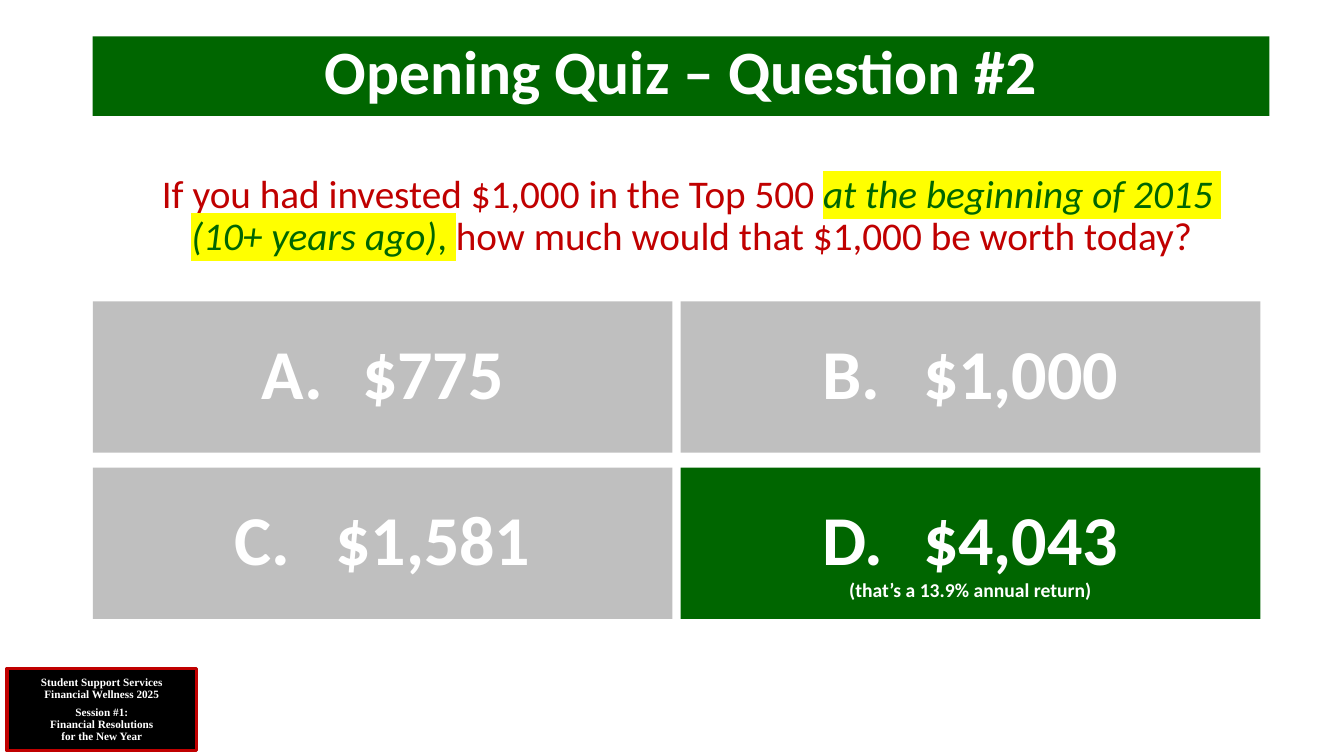
import copy
import dataclasses

import pptx
import pptx.dml.color
import pptx.enum.shapes
import pptx.enum.text
import pptx.oxml
import pptx.oxml.ns
import pptx.util

Inches = pptx.util.Inches


@dataclasses.dataclass(frozen=True)
class Theme:
    white: str = "FFFFFF"
    black: str = "000000"
    green: str = "006600"
    red: str = "C00000"
    gray: str = "BFBFBF"
    yellow: str = "FFFF00"
    body_font: str = "Calibri"
    footer_font: str = "Times New Roman"
    answer_size: int = 50
    title_size: int = 44
    question_size: int = 28
    note_size: int = 14
    footer_size: int = 8
    line_spacing: float = 0.9


@dataclasses.dataclass
class Span:
    text: str
    size: int
    color: str
    bold: bool = False
    italic: bool = False
    highlight: str = ""


def rgb(value):
    return pptx.dml.color.RGBColor.from_string(value)


class SlideBuilder:
    def __init__(self, page, theme):
        self.page = page
        self.theme = theme

    def panel(self, left, top, width, height, fill, border=None):
        box = self.page.shapes.add_shape(
            pptx.enum.shapes.MSO_SHAPE.RECTANGLE,
            Inches(left), Inches(top), Inches(width), Inches(height))
        box.shadow.inherit = False
        box.fill.solid()
        box.fill.fore_color.rgb = rgb(fill)
        if border:
            box.line.color.rgb = rgb(border)
            box.line.width = pptx.util.Pt(2.25)
        else:
            box.line.fill.background()
        return box

    def text_box(self, left, top, width, height):
        return self.page.shapes.add_textbox(
            Inches(left), Inches(top), Inches(width), Inches(height))

    def fill_text(self, box, paragraphs, font=None, inset=0.05, middle=False, gap=0):
        """Fill a box with paragraphs, each a list of spans; gap is the points between them."""
        anchors = pptx.enum.text.MSO_ANCHOR
        frame = box.text_frame
        frame.word_wrap = True
        frame.margin_top = Inches(inset)
        frame.vertical_anchor = anchors.MIDDLE if middle else anchors.TOP
        for index, spans in enumerate(paragraphs):
            para = frame.add_paragraph() if index else frame.paragraphs[0]
            para.alignment = pptx.enum.text.PP_ALIGN.CENTER
            para.line_spacing = self.theme.line_spacing
            if index:
                para.space_before = pptx.util.Pt(gap)
            for span in spans:
                self.add_span(para, span, font or self.theme.body_font)
            self.format_breaks(para)

    def add_span(self, para, span, font):
        for index, piece in enumerate(span.text.split("\n")):
            if index:
                para.add_line_break()
            if not piece:
                continue
            run = para.add_run()
            run.text = piece
            run.font.size = pptx.util.Pt(span.size)
            run.font.bold = span.bold
            run.font.italic = span.italic
            run.font.color.rgb = rgb(span.color)
            run.font.name = font
            if span.highlight:
                self.highlight(run, span.highlight)

    def highlight(self, run, color):
        qn = pptx.oxml.ns.qn
        namespace = pptx.oxml.ns.nsdecls("a")
        mark = pptx.oxml.parse_xml(
            f'<a:highlight {namespace}><a:srgbClr val="{color}"/></a:highlight>')
        run._r.find(qn("a:rPr")).find(qn("a:solidFill")).addnext(mark)

    def format_breaks(self, para):
        """Give each line break the format of the run before it."""
        qn = pptx.oxml.ns.qn
        for line_break in para._p.findall(qn("a:br")):
            properties = line_break.getprevious().find(qn("a:rPr"))
            line_break.append(copy.deepcopy(properties))


def main():
    theme = Theme()
    deck = pptx.Presentation()
    deck.slide_width = Inches(13.33)
    deck.slide_height = Inches(7.5)
    page = deck.slides.add_slide(deck.slide_layouts[6])
    builder = SlideBuilder(page, theme)

    footer = builder.panel(0.07, 6.63, 1.88, 0.82, theme.black, theme.red)
    footer_texts = [
        "Student Support Services\nFinancial Wellness 2025",
        "Session #1:\nFinancial Resolutions\nfor the New Year",
    ]
    builder.fill_text(
        footer,
        [[Span(text, theme.footer_size, theme.white, bold=True)] for text in footer_texts],
        font=theme.footer_font, middle=True, gap=4)

    left = 0.92
    title = builder.panel(left, 0.36, 11.67, 0.79, theme.green)
    builder.fill_text(title, [[
        Span("Opening Quiz – Question #2", theme.title_size, theme.white, bold=True)]])

    content_inset = 0.37
    size = theme.question_size
    question = builder.text_box(left, 1.36, 11.88, 1.5)
    builder.fill_text(question, [[
        Span("If you had invested $1,000 in the Top 500 ", size, theme.red),
        Span("at the beginning of 2015 \n(10+ years ago)", size, theme.green,
             italic=True, highlight=theme.yellow),
        Span(", ", size, theme.green, highlight=theme.yellow),
        Span("how much would that $1,000 be worth today?", size, theme.red),
    ]], inset=content_inset)

    answers = ["$775", "$1,000", "$1,581", "$4,043"]
    correct = "D"
    for index, (letter, amount) in enumerate(zip("ABCD", answers)):
        row, column = divmod(index, 2)
        fill = theme.green if letter == correct else theme.gray
        box = builder.panel(left + column * 5.83, 2.99 + row * 1.65, 5.75, 1.5, fill)
        spans = [Span(f"{letter}.\t{amount}", theme.answer_size, theme.white, bold=True)]
        if letter == correct:
            spans[0].text += "\n"
            spans.append(Span("(that’s a 13.9% annual return)",
                              theme.note_size, theme.white, bold=True))
        builder.fill_text(box, [spans], inset=content_inset)

    deck.save("out.pptx")


if __name__ == "__main__":
    main()
